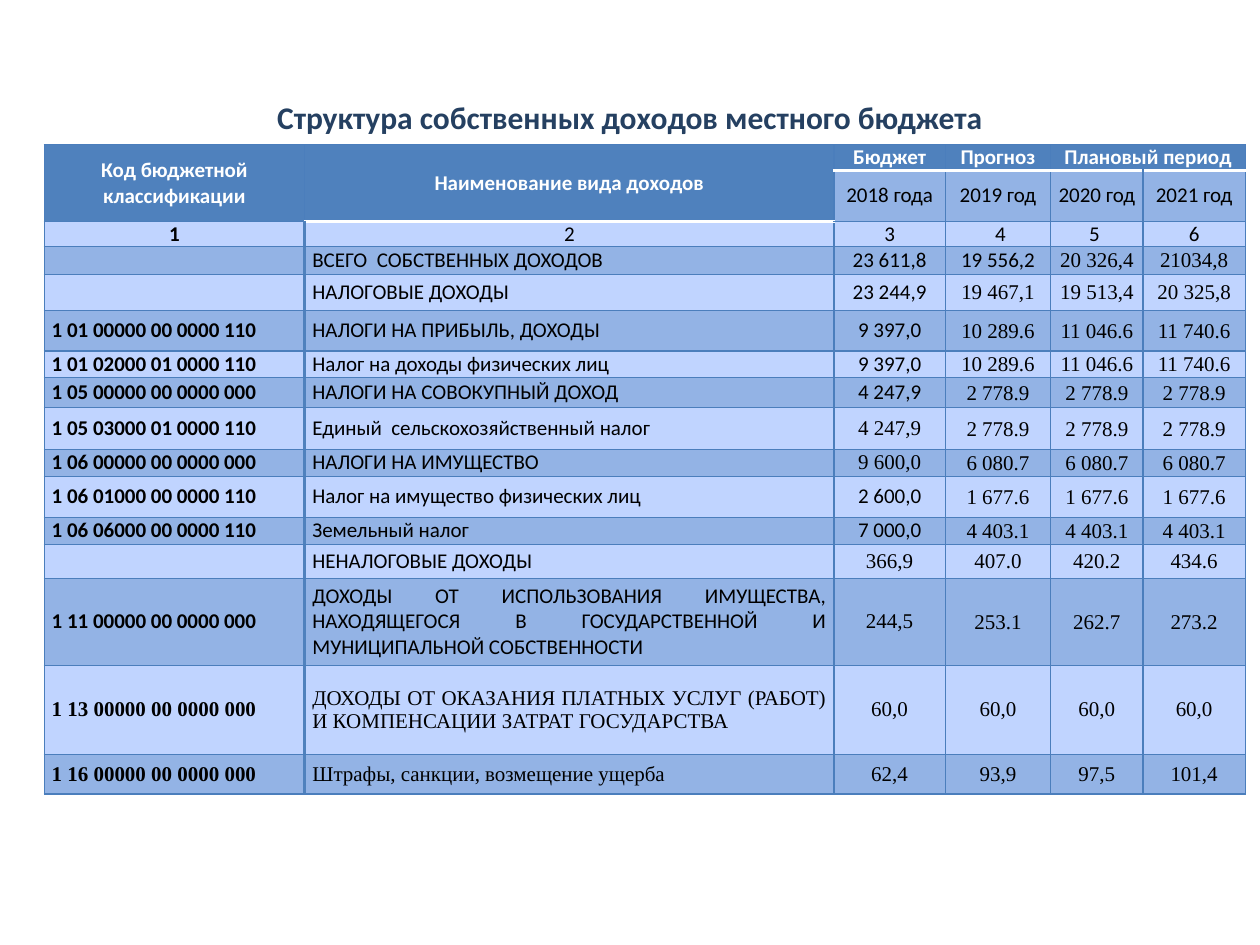
"""Build a slide with the table of the local budget's own revenues."""
from lxml import etree
from pptx import Presentation
from pptx.dml.color import RGBColor
from pptx.enum.text import MSO_ANCHOR, PP_ALIGN
from pptx.oxml.ns import qn
from pptx.util import Pt

MIDDLE = MSO_ANCHOR.MIDDLE
CENTER, JUSTIFY = PP_ALIGN.CENTER, PP_ALIGN.JUSTIFY
SANS, SERIF = "Calibri", "Times New Roman"
WHITE, BLACK, NAVY = "FFFFFF", "000000", "254061"
HEADER_FILL, LIGHT_FILL, BAND_FILL = "4F81BD", "C0D4FF", "93B3E5"
THIN_LINE = ("4B7EBC", 0.75)
CODE_LINE = ("4F81BD", 2)
WHITE_LINE = (WHITE, 2)

TITLE = "Структура собственных доходов местного бюджета"
TITLE_BOX = (36, 21.6, 648, 90)
TABLE_LEFT, TABLE_TOP = 25.2, 82.8
COLUMN_WIDTHS = [149, 302.4, 63.6, 60.3, 52.7, 58.5]
MERGES = [((0, 0), (1, 0)), ((0, 1), (1, 1)), ((0, 4), (0, 5))]
HEADER_ROWS = 2

# Each row: height, number of leading sans-serif cells, texts
ROWS = [
    (14.4, 6, ["Код бюджетной классификации", "Наименование вида доходов",
               "Бюджет", "Прогноз", "Плановый период", ""]),
    (29.2, 6, ["", "", "2018 года", "2019 год", "2020 год", "2021 год"]),
    (14.4, 6, ["1", "2", "3", " 4", "5 ", "6"]),
    (15.8, 4, ["", "ВСЕГО  СОБСТВЕННЫХ ДОХОДОВ", "23 611,8", "19 556,2", "20 326,4", "21034,8"]),
    (20.7, 3, ["", "НАЛОГОВЫЕ ДОХОДЫ", "23 244,9", "19 467,1", "19 513,4", "20 325,8"]),
    (23.3, 3, ["1 01 00000 00 0000 110", "НАЛОГИ НА ПРИБЫЛЬ, ДОХОДЫ",
               "9 397,0", "10 289.6", "11 046.6", "11 740.6"]),
    (15, 3, ["1 01 02000 01 0000 110", "Налог на доходы физических лиц",
             "9 397,0", "10 289.6", "11 046.6", "11 740.6"]),
    (17.2, 3, ["1 05 00000 00 0000 000", "НАЛОГИ НА СОВОКУПНЫЙ ДОХОД",
               "4 247,9", "2 778.9", "2 778.9", "2 778.9"]),
    (23.9, 2, ["1 05 03000 01 0000 110", "Единый  сельскохозяйственный налог",
               "4 247,9", "2 778.9", "2 778.9", "2 778.9"]),
    (15.3, 2, ["1 06 00000 00 0000 000", "НАЛОГИ НА ИМУЩЕСТВО",
               "9 600,0", "6 080.7", "6 080.7", "6 080.7"]),
    (23.6, 3, ["1 06 01000 00 0000 110", "Налог на имущество физических лиц",
               "2 600,0", "1 677.6", "1 677.6", "1 677.6"]),
    (15.3, 3, ["1 06 06000 00 0000 110", "Земельный налог",
               "7 000,0", "4 403.1", "4 403.1", "4 403.1"]),
    (19.5, 2, ["", "НЕНАЛОГОВЫЕ ДОХОДЫ", "366,9", "407.0", "420.2", "434.6"]),
    (49.7, 2, ["1 11 00000 00 0000 000",
               "ДОХОДЫ ОТ ИСПОЛЬЗОВАНИЯ ИМУЩЕСТВА, НАХОДЯЩЕГОСЯ В "
               "ГОСУДАРСТВЕННОЙ И МУНИЦИПАЛЬНОЙ СОБСТВЕННОСТИ",
               "244,5", "253.1", "262.7", "273.2"]),
    (51, 0, ["1 13 00000 00 0000 000",
             "ДОХОДЫ ОТ ОКАЗАНИЯ ПЛАТНЫХ УСЛУГ (РАБОТ) И КОМПЕНСАЦИИ ЗАТРАТ ГОСУДАРСТВА",
             "60,0", "60,0", "60,0", "60,0"]),
    (22.6, 0, ["1 16 00000 00 0000 000", "Штрафы, санкции, возмещение ущерба",
               "62,4", "93,9", "97,5", "101,4"]),
]


def color(value):
    return RGBColor.from_string(value)


def set_attributes(target, values):
    for name, value in values.items():
        setattr(target, name, value)


def write_text(paragraph, text, size, font, text_color, bold, alignment):
    paragraph.alignment = alignment
    if not text:
        etree.SubElement(paragraph._p, qn("a:endParaRPr"), sz=str(size * 100))
        return
    run = paragraph.add_run()
    run.text = text
    set_attributes(run.font, {"size": Pt(size), "name": font, "bold": bold})
    run.font.color.rgb = color(text_color)


def set_borders(cell, borders):
    properties = cell._tc.get_or_add_tcPr()
    for side in "LRTB":
        line_color, width = borders.get(side, THIN_LINE)
        line = etree.SubElement(properties, qn(f"a:ln{side}"), w=str(Pt(width)))
        fill = etree.SubElement(line, qn("a:solidFill"))
        etree.SubElement(fill, qn("a:srgbClr"), val=line_color)


def cell_borders(row, column):
    borders = {}
    white_below = 0 if column > 1 else 1
    if column > 0 and row == white_below:
        borders["B"] = WHITE_LINE
    if column > 0 and row == white_below + 1:
        borders["T"] = WHITE_LINE
    if row >= HEADER_ROWS and column < 2:
        borders["R" if column == 0 else "L"] = CODE_LINE
    return borders


def format_cell(cell, row, column, text, font):
    is_header = row == 0 or (row == 1 and column < 2)
    is_number = "." in text
    side = 0.72 if is_number else 4.32
    set_attributes(cell, {
        "vertical_anchor": MIDDLE,
        "margin_left": Pt(side), "margin_right": Pt(side),
        "margin_top": Pt(0.72 if is_number else 0), "margin_bottom": Pt(0),
    })
    set_borders(cell, cell_borders(row, column))
    cell.fill.solid()
    body_fill = BAND_FILL if row % 2 else LIGHT_FILL
    cell.fill.fore_color.rgb = color(HEADER_FILL if is_header else body_fill)
    bold = is_header or (row >= HEADER_ROWS and column == 0)
    alignment = JUSTIFY if row > HEADER_ROWS and column < 2 else CENTER
    write_text(cell.text_frame.paragraphs[0], text, 12, font,
               WHITE if is_header else BLACK, bold, alignment)


def add_title(slide):
    box = slide.shapes.add_textbox(*map(Pt, TITLE_BOX))
    set_attributes(box.text_frame, {"word_wrap": True, "vertical_anchor": MIDDLE})
    write_text(box.text_frame.paragraphs[0], TITLE, 18, SANS, NAVY, True, CENTER)


def add_revenue_table(slide):
    height = sum(row_height for row_height, _, _ in ROWS)
    table = slide.shapes.add_table(
        len(ROWS), len(COLUMN_WIDTHS), Pt(TABLE_LEFT), Pt(TABLE_TOP),
        Pt(sum(COLUMN_WIDTHS)), Pt(height)).table
    set_attributes(table, {"first_row": False, "horz_banding": False})
    for column, width in zip(table.columns, COLUMN_WIDTHS):
        column.width = Pt(width)
    for start, end in MERGES:
        table.cell(*start).merge(table.cell(*end))
    for row, (row_height, sans_cells, texts) in enumerate(ROWS):
        table.rows[row].height = Pt(row_height)
        for column, text in enumerate(texts):
            font = SANS if column < sans_cells else SERIF
            format_cell(table.cell(row, column), row, column, text, font)


def main():
    presentation = Presentation()
    set_attributes(presentation, {"slide_width": Pt(720), "slide_height": Pt(540)})
    slide = presentation.slides.add_slide(presentation.slide_layouts[6])
    add_title(slide)
    add_revenue_table(slide)
    presentation.save("out.pptx")


if __name__ == "__main__":
    main()
